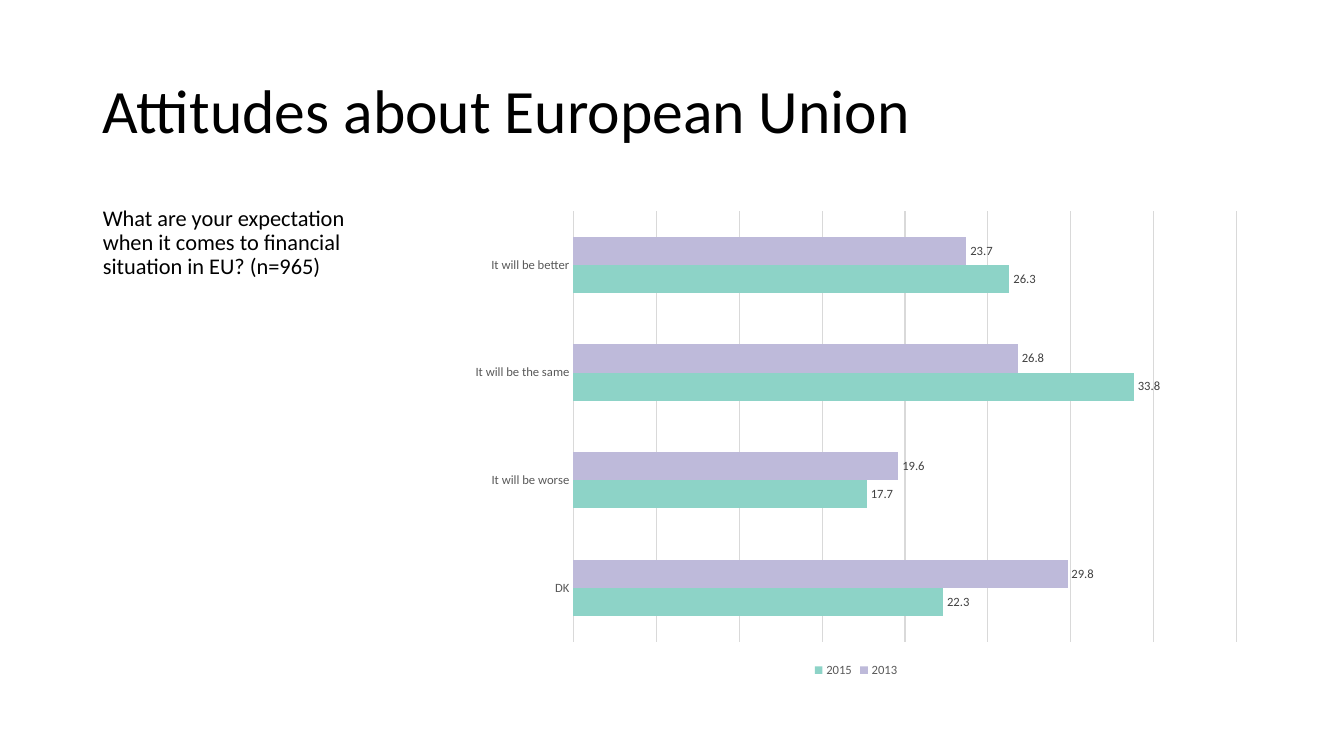
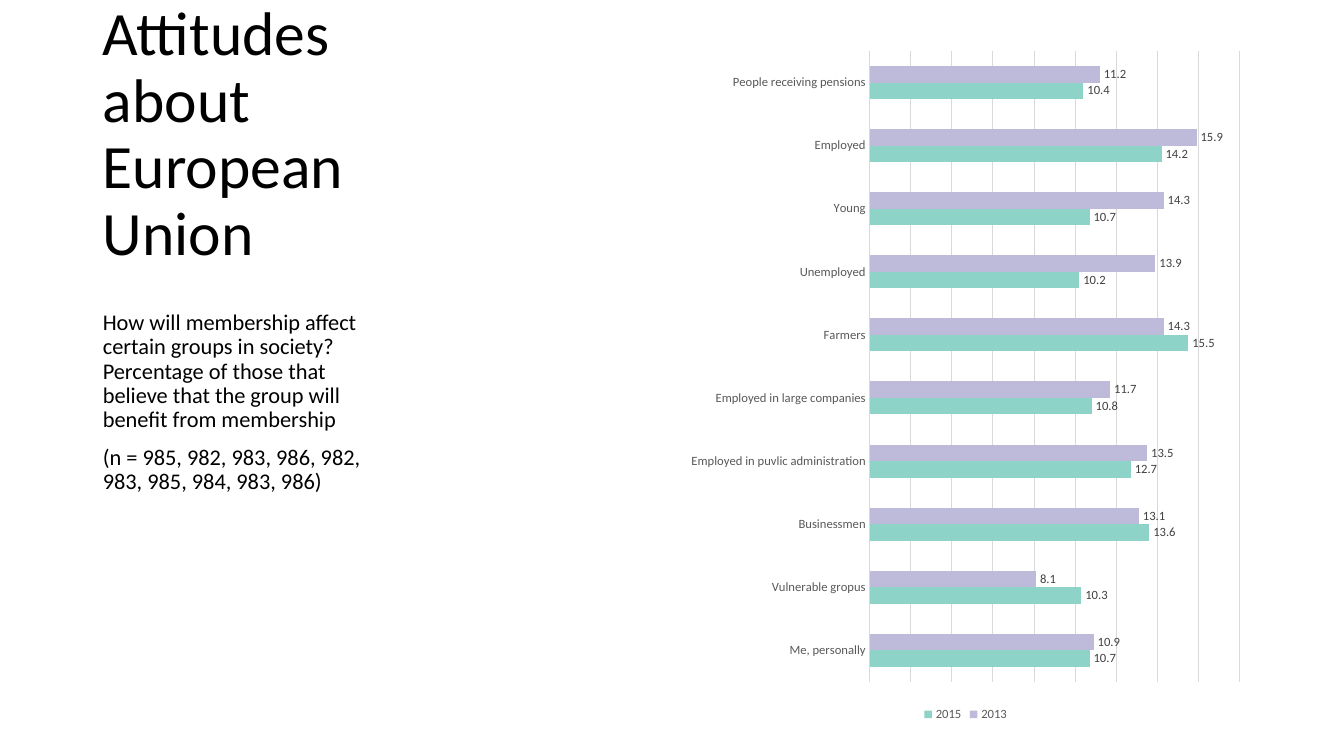
"""Build two slides on attitudes about the European Union."""
import lxml.etree
import pptx
import pptx.chart.data
import pptx.dml.color
import pptx.enum.chart
import pptx.enum.text
import pptx.oxml.ns
import pptx.util

RGB = pptx.dml.color.RGBColor
BLACK = RGB(0x00, 0x00, 0x00)
DARK = RGB(0x40, 0x40, 0x40)
GREY = RGB(0x59, 0x59, 0x59)
PALE = RGB(0xD9, 0xD9, 0xD9)
LILAC = RGB(0xBE, 0xBA, 0xDA)
MINT = RGB(0x8D, 0xD3, 0xC7)
FACE = "Calibri"
LEFT = 6.9
SIDE = 21.75
TITLE = "Attitudes about European Union"


class Deck:
    def __init__(self):
        self.show = pptx.Presentation()
        self.show.slide_width = pptx.util.Inches(13.33)
        self.show.slide_height = pptx.util.Inches(7.5)
        self.slide = None

    def page(self):
        self.slide = self.show.slides.add_slide(self.show.slide_layouts[1])

    def area(self, box):
        wide, high = self.show.slide_width, self.show.slide_height
        return [int(part * full / 100)
                for part, full in zip(box, (wide, high, wide, high))]

    def font(self, font, size, color):
        font.name = FACE
        font.size = pptx.util.Pt(size)
        font.color.rgb = color

    def text(self, shape, box, lines, size, anchor):
        shape.left, shape.top, shape.width, shape.height = self.area(box)
        frame = shape.text_frame
        frame.text = "\n".join(lines)
        frame.word_wrap = True
        frame.auto_size = pptx.enum.text.MSO_AUTO_SIZE.NONE
        frame.vertical_anchor = anchor
        for rank, para in enumerate(frame.paragraphs):
            props = para._p.get_or_add_pPr()
            props.set("marL", "0")
            props.set("indent", "0")
            lxml.etree.SubElement(props, pptx.oxml.ns.qn("a:buNone"))
            para.alignment = pptx.enum.text.PP_ALIGN.LEFT
            para.line_spacing = 0.9
            para.space_before = pptx.util.Pt(10 if rank else 0)
            for run in para.runs:
                self.font(run.font, size, BLACK)

    def title(self, top, width):
        self.text(self.slide.shapes.title, (LEFT, top, width, 19.33),
                  [TITLE], 44, pptx.enum.text.MSO_ANCHOR.MIDDLE)

    def body(self, top, height, lines):
        self.text(self.slide.placeholders[1], (LEFT, top, SIDE, height),
                  lines, 16, pptx.enum.text.MSO_ANCHOR.TOP)

    def line(self, form):
        form.line.color.rgb = PALE
        form.line.width = pptx.util.Pt(0.75)

    def bars(self, box, rows, top, step):
        data = pptx.chart.data.CategoryChartData(number_format="0.0")
        names, old, new = zip(*rows)
        data.categories = names
        data.add_series("2013", old)
        data.add_series("2015", new)
        kind = pptx.enum.chart.XL_CHART_TYPE.BAR_CLUSTERED
        chart = self.slide.shapes.add_chart(kind, *self.area(box), data).chart
        self.font(chart.font, 10, BLACK)
        chart.has_title = False
        chart.has_legend = True
        chart.legend.position = pptx.enum.chart.XL_LEGEND_POSITION.BOTTOM
        chart.legend.include_in_layout = False
        self.font(chart.legend.font, 9, GREY)

        cats = chart.category_axis
        cats.reverse_order = True
        cats.major_tick_mark = pptx.enum.chart.XL_TICK_MARK.NONE
        cats.minor_tick_mark = pptx.enum.chart.XL_TICK_MARK.NONE
        self.line(cats.format)
        self.font(cats.tick_labels.font, 9, GREY)

        vals = chart.value_axis
        vals.visible = False
        vals.minimum_scale, vals.maximum_scale = 0, top
        vals.major_unit = step
        vals.has_major_gridlines = True
        self.line(vals.major_gridlines.format)

        plot = chart.plots[0]
        plot.gap_width = 182
        plot.overlap = 0
        plot.vary_by_categories = False
        for series, color in zip(plot.series, (LILAC, MINT)):
            series.format.fill.solid()
            series.format.fill.fore_color.rgb = color
            series.invert_if_negative = False
            labels = series.data_labels
            labels.show_value = True
            labels.position = pptx.enum.chart.XL_LABEL_POSITION.OUTSIDE_END
            self.font(labels.font, 9, DARK)


def main():
    deck = Deck()

    deck.page()
    deck.title(5.33, 86.3)
    deck.body(26.67, 63.47, [
        "What are your expectation when it comes to financial "
        "situation in EU? (n=965)"])
    deck.bars((34.2, 26.67, 59, 63.47), [
        ("It will be better", 23.7, 26.3),
        ("It will be the same", 26.8, 33.8),
        ("It will be worse", 19.6, 17.7),
        ("DK", 29.8, 22.3)], 40, 5)

    deck.page()
    deck.title(8.27, 27.15)
    deck.body(40.53, 49.6, [
        "How will membership affect certain groups in society? "
        "Percentage of those that believe that the group will "
        "benefit from membership",
        "(n = 985, 982, 983, 986, 982, 983, 985, 984, 983, 986)"])
    deck.bars((50.6, 4.93, 42.5, 91.07), [
        ("People receiving pensions", 11.2, 10.4),
        ("Employed", 15.9, 14.2),
        ("Young", 14.3, 10.7),
        ("Unemployed", 13.9, 10.2),
        ("Farmers", 14.3, 15.5),
        ("Employed in large companies", 11.7, 10.8),
        ("Employed in puvlic administration", 13.5, 12.7),
        ("Businessmen", 13.1, 13.6),
        ("Vulnerable gropus", 8.1, 10.3),
        ("Me, personally", 10.9, 10.7)], 18, 2)

    deck.show.save("out.pptx")


if __name__ == "__main__":
    main()
